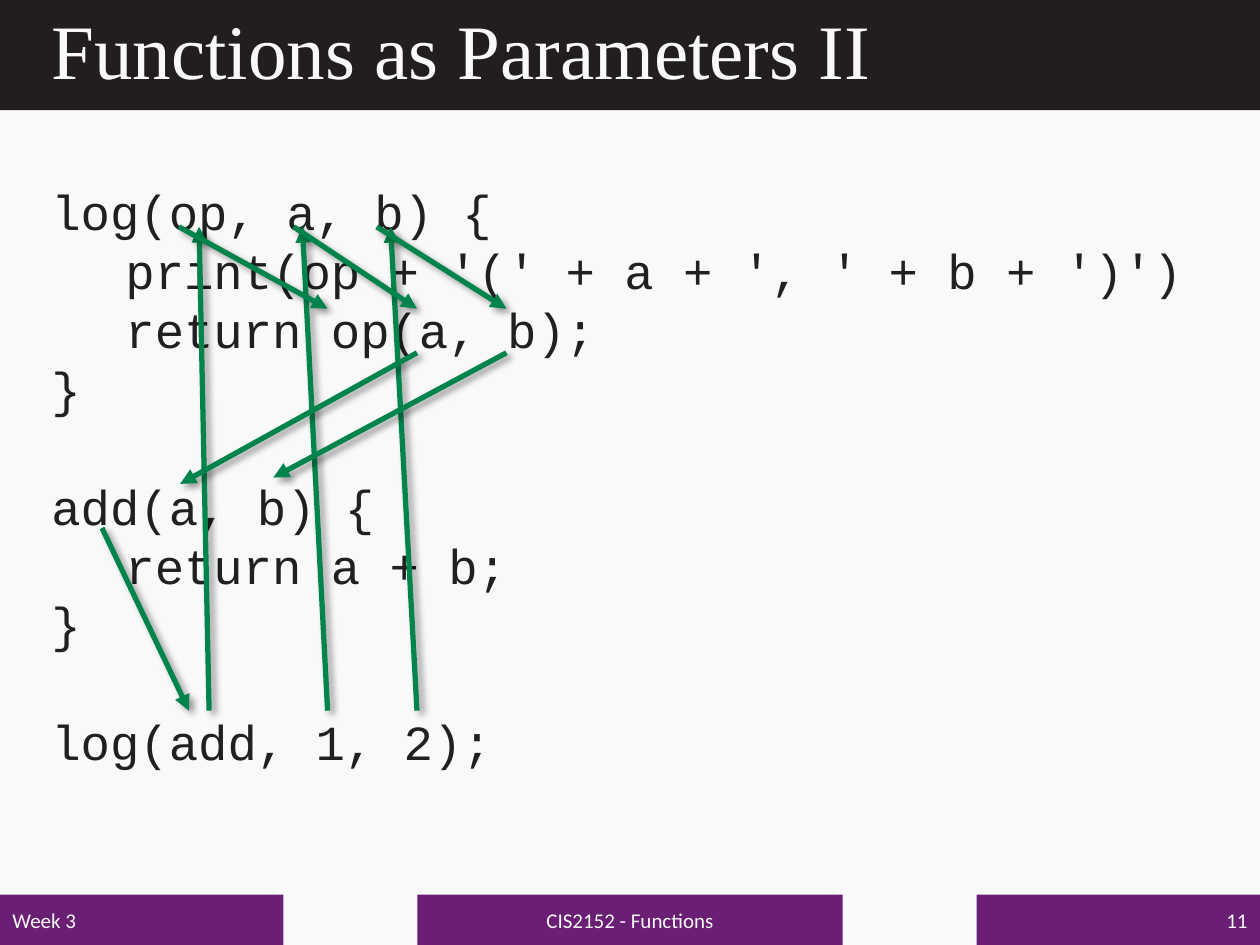
from dataclasses import dataclass

from lxml import etree
from pptx import Presentation
from pptx.dml.color import RGBColor
from pptx.enum.shapes import MSO_CONNECTOR, MSO_SHAPE
from pptx.enum.text import MSO_ANCHOR, PP_ALIGN
from pptx.oxml.ns import qn
from pptx.slide import Slide
from pptx.text.text import TextFrame
from pptx.util import Pt

RECTANGLE = MSO_SHAPE.RECTANGLE
STRAIGHT = MSO_CONNECTOR.STRAIGHT
LEFT, CENTER, RIGHT = PP_ALIGN.LEFT, PP_ALIGN.CENTER, PP_ALIGN.RIGHT
TOP, MIDDLE = MSO_ANCHOR.TOP, MSO_ANCHOR.MIDDLE


@dataclass(frozen=True)
class TextStyle:
    font: str
    size: float
    color: str


@dataclass(frozen=True)
class Theme:
    paper: str = "F9F9F9"
    header: str = "221E1F"
    footer: str = "6A1F74"
    arrow: str = "00844B"
    shadow: str = "000000"
    title_text: TextStyle = TextStyle("Times New Roman", 44, "F9F9F9")
    footer_text: TextStyle = TextStyle("Calibri", 12, "F9F9F9")
    code_text: TextStyle = TextStyle("Courier New", 28, "202020")


@dataclass(frozen=True)
class Area:
    left: float
    top: float
    width: float
    height: float

    def lengths(self) -> tuple:
        return Pt(self.left), Pt(self.top), Pt(self.width), Pt(self.height)


@dataclass(frozen=True)
class FooterPart:
    text: str
    left: float
    width: float
    align: PP_ALIGN


@dataclass(frozen=True)
class Arrow:
    start: tuple[float, float]
    end: tuple[float, float]


THEME = Theme()
PAGE_WIDTH, PAGE_HEIGHT = 720, 540
FOOTER_HEIGHT = 28.8
CODE_PITCH = 33.65
CODE_TAB = 42.3

FOOTER = [
    FooterPart("Week 3", 0, 162, LEFT),
    FooterPart("CIS2152 - Functions", 238.5, 243, CENTER),
    FooterPart("11", 558, 162, RIGHT),
]

CODE = """log(op, a, b) {
\tprint(op + '(' + a + ', ' + b + ')')
\treturn op(a, b);
}

add(a, b) {
\treturn a + b;
}

log(add, 1, 2);"""

LOG_HEADER, INNER_CALL_TOP, INNER_CALL_BOTTOM, OUTER_CALL = 129.6, 176.4, 201.6, 406.1
ARROWS = [
    Arrow((58.3, 301.7), (108, OUTER_CALL)),
    Arrow((119.5, OUTER_CALL), (113.8, LOG_HEADER)),
    Arrow((187.2, OUTER_CALL), (172.8, LOG_HEADER)),
    Arrow((238.3, OUTER_CALL), (223.2, LOG_HEADER)),
    Arrow((102.2, LOG_HEADER), (187.2, INNER_CALL_TOP)),
    Arrow((167.8, LOG_HEADER), (238.3, INNER_CALL_TOP)),
    Arrow((215.3, LOG_HEADER), (289.4, INNER_CALL_TOP)),
    Arrow((238.3, INNER_CALL_BOTTOM), (103, 276.5)),
    Arrow((289.4, INNER_CALL_BOTTOM), (156.2, 272.9)),
]


def write_text(frame: TextFrame, text: str, style: TextStyle, anchor: MSO_ANCHOR,
               align: PP_ALIGN = LEFT) -> None:
    frame.word_wrap = True
    frame.vertical_anchor = anchor
    frame.text = text
    for para in frame.paragraphs:
        para.alignment = align
        para.font.size = Pt(style.size)
        for span in para.runs:
            span.font.name = style.font
            span.font.size = Pt(style.size)
            span.font.color.rgb = RGBColor.from_string(style.color)


def add_bar(page: Slide, area: Area, color: str) -> TextFrame:
    box = page.shapes.add_shape(RECTANGLE, *area.lengths())
    box.shadow.inherit = False
    box.fill.solid()
    box.fill.fore_color.rgb = RGBColor.from_string(color)
    box.line.fill.background()
    return box.text_frame


def add_title(page: Slide, text: str) -> None:
    box = page.shapes.add_textbox(*Area(22.3, 0, 676.1, 61.9).lengths())
    write_text(box.text_frame, text, THEME.title_text, MIDDLE)
    box.text_frame.paragraphs[0].line_spacing = 0.9


def add_code(page: Slide, text: str) -> None:
    box = page.shapes.add_textbox(*Area(22.3, 97.2, 666, 346.3).lengths())
    write_text(box.text_frame, text, THEME.code_text, TOP)
    box.text_frame.margin_top = Pt(6.6)
    for para in box.text_frame.paragraphs:
        para.line_spacing = Pt(CODE_PITCH)
        properties = para._p.get_or_add_pPr()
        tabs = etree.SubElement(properties, qn("a:tabLst"))
        etree.SubElement(tabs, qn("a:tab"), pos=str(Pt(CODE_TAB)), algn="l")


def add_arrow(page: Slide, arrow: Arrow) -> None:
    points = [Pt(value) for value in (*arrow.start, *arrow.end)]
    connector = page.shapes.add_connector(STRAIGHT, *points)
    connector.line.width = Pt(3)
    connector.line.color.rgb = RGBColor.from_string(THEME.arrow)
    etree.SubElement(connector.line._get_or_add_ln(), qn("a:tailEnd"), type="triangle")
    effects = etree.SubElement(connector._element.spPr, qn("a:effectLst"))
    shadow = etree.SubElement(effects, qn("a:outerShdw"), blurRad=str(Pt(4)),
                              dist=str(Pt(3)), dir=str(45 * 60000))
    color = etree.SubElement(shadow, qn("a:srgbClr"), val=THEME.shadow)
    etree.SubElement(color, qn("a:alpha"), val="40000")


def main() -> None:
    deck = Presentation()
    deck.slide_width, deck.slide_height = Pt(PAGE_WIDTH), Pt(PAGE_HEIGHT)
    page = deck.slides.add_slide(deck.slide_layouts[6])
    page.background.fill.solid()
    page.background.fill.fore_color.rgb = RGBColor.from_string(THEME.paper)

    add_bar(page, Area(0, 0, PAGE_WIDTH, 63), THEME.header)
    add_title(page, "Functions as Parameters II")
    for part in FOOTER:
        area = Area(part.left, PAGE_HEIGHT - FOOTER_HEIGHT, part.width, FOOTER_HEIGHT)
        frame = add_bar(page, area, THEME.footer)
        write_text(frame, part.text, THEME.footer_text, MIDDLE, part.align)
    add_code(page, CODE)
    for arrow in ARROWS:
        add_arrow(page, arrow)

    deck.save("out.pptx")


if __name__ == "__main__":
    main()
